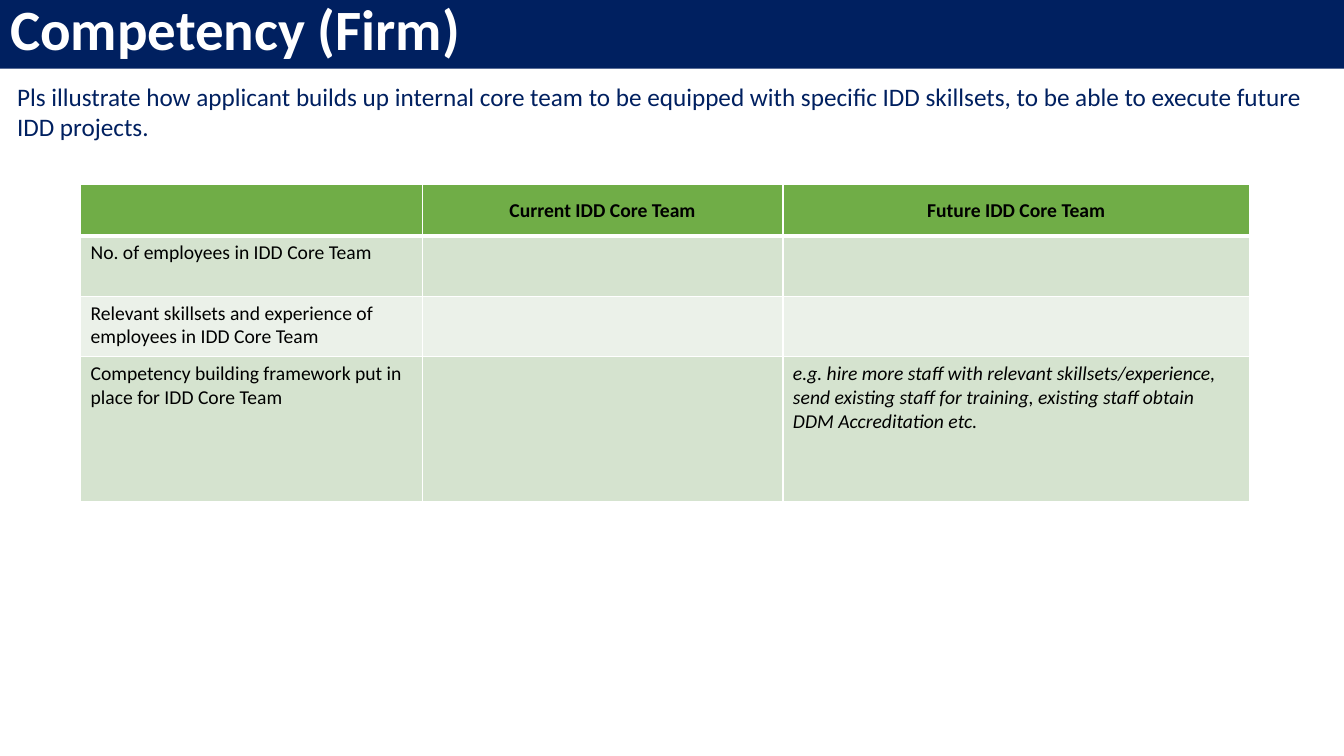
from lxml.etree import SubElement
from pptx import Presentation
from pptx.dml.color import RGBColor
from pptx.enum.text import MSO_ANCHOR as Anchor, MSO_AUTO_SIZE as AutoSize, PP_ALIGN as Align
from pptx.oxml.ns import qn
from pptx.util import Cm, Pt

TITLE = "Competency (Firm)"
INTRO = (
    "Pls illustrate how applicant builds up internal core team to be equipped "
    "with specific IDD skillsets, to be able to execute future IDD projects."
)
ROWS = [
    ("", "Current IDD Core Team", "Future IDD Core Team"),
    ("No. of employees in IDD Core Team", "", ""),
    ("Relevant skillsets and experience of employees in IDD Core Team", "", ""),
    (
        "Competency building framework put in place for IDD Core Team",
        "",
        "e.g. hire more staff with relevant skillsets/experience, send existing "
        "staff for training, existing staff obtain DDM Accreditation etc.",
    ),
]
COLUMN_WIDTHS = (8.61, 9.09, 11.76)
ROW_HEIGHTS = (1.3, 1.52, 1.52, 3.66)
SLIDE_WIDTH, SLIDE_HEIGHT = 33.87, 19.05
FONT = "Calibri"
NAVY, WHITE, BLACK = "002060", "FFFFFF", "000000"
HEADER_GREEN, BANDS = "70AD47", ("EBF1E9", "D5E3CF")


def color(value):
    return RGBColor.from_string(value)


def fill_with(target, value):
    target.fill.solid()
    target.fill.fore_color.rgb = color(value)


def place(shape, left, top, width, height):
    shape.left, shape.top = Cm(left), Cm(top)
    shape.width, shape.height = Cm(width), Cm(height)


def add_run(paragraph, text, size, value, bold=False, italic=False):
    run = paragraph.add_run()
    run.text = text
    run.font.name = FONT
    run.font.size = Pt(size)
    run.font.bold = bold
    run.font.italic = italic
    run.font.color.rgb = color(value)


def add_borders(cell, widths):
    properties = cell._tc.get_or_add_tcPr()
    for index, (side, width) in enumerate(widths.items()):
        line = SubElement(properties, qn(f"a:ln{side}"), w=str(Pt(width)))
        fill = SubElement(line, qn("a:solidFill"))
        SubElement(fill, qn("a:srgbClr"), val=WHITE)
        properties.insert(index, line)


def add_title(slide):
    title = slide.shapes.title
    place(title, 0, 0, SLIDE_WIDTH, 1.73)
    fill_with(title, NAVY)
    frame = title.text_frame
    frame.auto_size = AutoSize.NONE
    frame.vertical_anchor = Anchor.MIDDLE
    paragraph = frame.paragraphs[0]
    paragraph.alignment = Align.LEFT
    paragraph.line_spacing = 0.8
    add_run(paragraph, TITLE, 40.7, WHITE, bold=True)


def add_intro(slide):
    box = slide.shapes.add_textbox(Cm(0.18), Cm(1.93), Cm(33.45), Cm(1.8))
    box.text_frame.word_wrap = True
    add_run(box.text_frame.paragraphs[0], INTRO, 18, NAVY)


def add_team_table(slide):
    frame = slide.shapes.add_table(
        len(ROWS), len(COLUMN_WIDTHS), Cm(2.03), Cm(4.65),
        Cm(sum(COLUMN_WIDTHS)), Cm(sum(ROW_HEIGHTS)),
    )
    table = frame.table
    for column, width in zip(table.columns, COLUMN_WIDTHS):
        column.width = Cm(width)
    for row, height in zip(table.rows, ROW_HEIGHTS):
        row.height = Cm(height)
    for row_index, texts in enumerate(ROWS):
        header = row_index == 0
        for column_index, text in enumerate(texts):
            cell = table.cell(row_index, column_index)
            fill_with(cell, HEADER_GREEN if header else BANDS[row_index % 2])
            add_borders(cell, {
                "L": 1, "R": 1,
                "T": 3 if row_index == 1 else 1,
                "B": 3 if header else 1,
            })
            cell.vertical_anchor = Anchor.MIDDLE if header else Anchor.TOP
            paragraph = cell.text_frame.paragraphs[0]
            paragraph.alignment = Align.CENTER if header else Align.LEFT
            if text:
                example = not header and column_index > 0
                add_run(paragraph, text, 14, BLACK, bold=header, italic=example)


def main():
    presentation = Presentation()
    presentation.slide_width = Cm(SLIDE_WIDTH)
    presentation.slide_height = Cm(SLIDE_HEIGHT)
    slide = presentation.slides.add_slide(presentation.slide_layouts[5])
    add_title(slide)
    add_intro(slide)
    add_team_table(slide)
    presentation.save("out.pptx")


if __name__ == "__main__":
    main()
